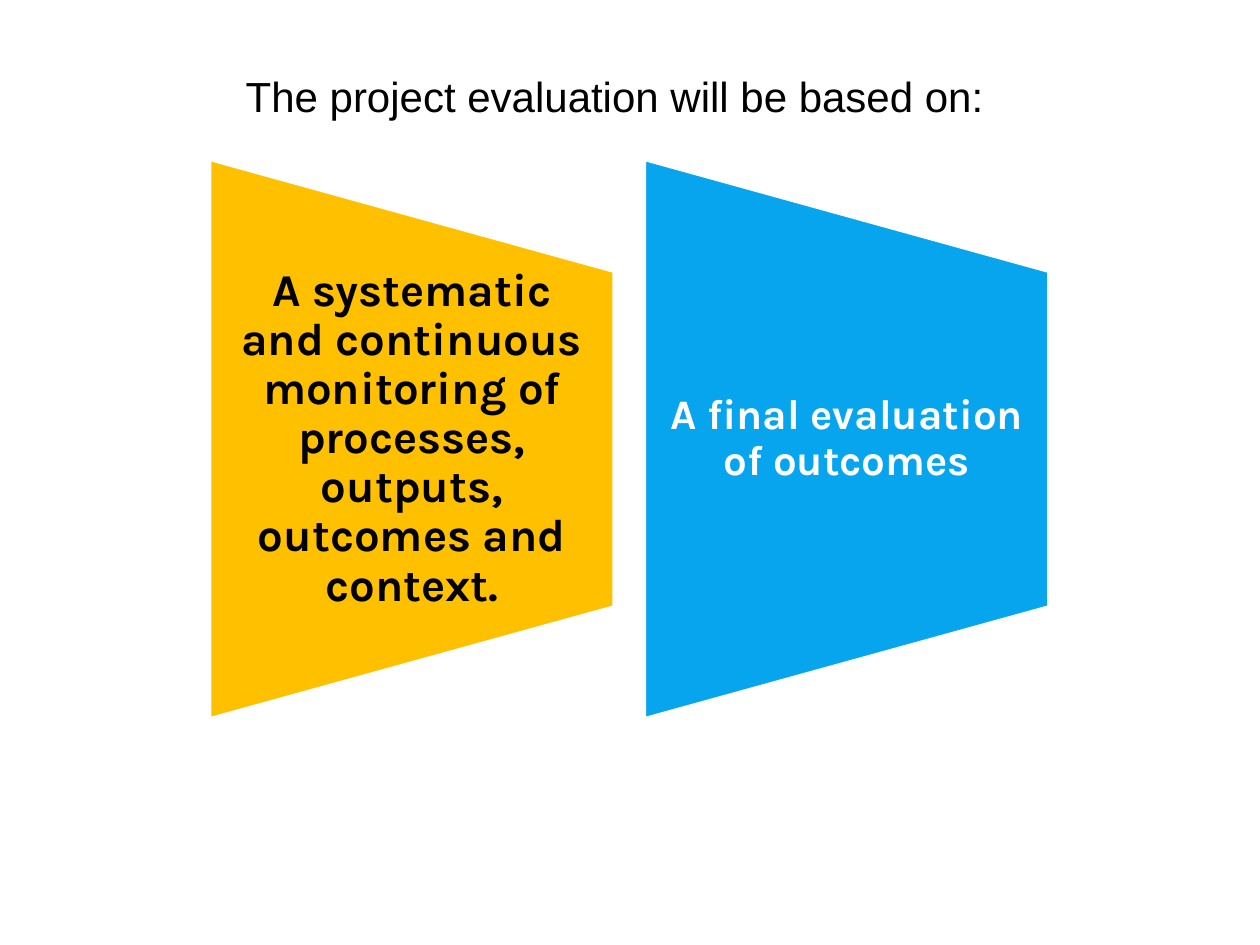
from dataclasses import dataclass

from pptx import Presentation
from pptx.dml.color import RGBColor
from pptx.enum.shapes import MSO_SHAPE as Shape
from pptx.enum.text import MSO_ANCHOR as Anchor, MSO_AUTO_SIZE as AutoSize, PP_ALIGN as Align
from pptx.util import Pt

COLORS = {"black": "000000", "white": "FFFFFF", "amber": "FFC000", "blue": "08A5EF"}

# Panel geometry in points; the trapezoid is turned a quarter, so its width runs vertically
PANEL_LENGTH, PANEL_DEPTH = 319.7, 231.1
TEXT_HEIGHT = 192.2
FIRST_CENTER, PANEL_PITCH, CENTER_Y = 235.4, 248.4, 250.9


@dataclass
class Panel:
    text: str
    fill: str
    color: str
    size: float
    inset: float


PANELS = [
    Panel("A systematic and continuous monitoring of processes, outputs, outcomes and context.",
          "amber", "black", 26, 13),
    Panel("A final evaluation of outcomes", "blue", "white", 24, 12.2),
]


def rgb(name: str) -> RGBColor:
    return RGBColor.from_string(COLORS[name])


def set_all(target, values: dict) -> None:
    for name, value in values.items():
        setattr(target, name, value)


def style_font(font, name: str, size: float, color: str, bold: bool) -> None:
    set_all(font, {"name": name, "size": Pt(size), "bold": bold})
    font.color.rgb = rgb(color)


def centered_frame(center_x: float, width: float, height: float) -> list:
    return [Pt(center_x - width / 2), Pt(CENTER_Y - height / 2), Pt(width), Pt(height)]


def add_title(page, text: str) -> None:
    title = page.shapes.title
    set_all(title, {"left": Pt(133.2), "top": Pt(36.7), "width": Pt(480.2), "height": Pt(36.4)})
    frame = title.text_frame
    frame.text = text
    set_all(frame, {"vertical_anchor": Anchor.TOP, "auto_size": AutoSize.NONE,
                    "word_wrap": True})
    para = frame.paragraphs[0]
    para.alignment = Align.LEFT
    style_font(para.runs[0].font, "Arial", 24, "black", False)


def add_panel(page, panel: Panel, center_x: float) -> None:
    # Trapezoid
    trapezoid = page.shapes.add_shape(Shape.FLOWCHART_MANUAL_OPERATION,
                                      *centered_frame(center_x, PANEL_LENGTH, PANEL_DEPTH))
    trapezoid.rotation = 270
    trapezoid.shadow.inherit = False
    trapezoid.fill.solid()
    trapezoid.fill.fore_color.rgb = rgb(panel.fill)
    trapezoid.line.color.rgb = rgb("white")
    trapezoid.line.width = Pt(2)

    # Upright text over it
    box = page.shapes.add_textbox(*centered_frame(center_x, PANEL_DEPTH, TEXT_HEIGHT))
    frame = box.text_frame
    set_all(frame, {"word_wrap": True, "vertical_anchor": Anchor.MIDDLE,
                    "margin_left": Pt(panel.inset), "margin_right": Pt(panel.inset),
                    "margin_top": 0, "margin_bottom": 0})
    para = frame.paragraphs[0]
    set_all(para, {"alignment": Align.CENTER, "line_spacing": 0.9})
    span = para.add_run()
    span.text = panel.text
    style_font(span.font, "Karla", panel.size, panel.color, True)


def main() -> None:
    deck = Presentation()
    set_all(deck, {"slide_width": Pt(720), "slide_height": Pt(540)})
    page = deck.slides.add_slide(deck.slide_layouts[5])
    page.background.fill.solid()
    page.background.fill.fore_color.rgb = rgb("white")

    add_title(page, "The project evaluation will be based on:")
    for index, panel in enumerate(PANELS):
        add_panel(page, panel, FIRST_CENTER + index * PANEL_PITCH)

    deck.save("out.pptx")


if __name__ == "__main__":
    main()
